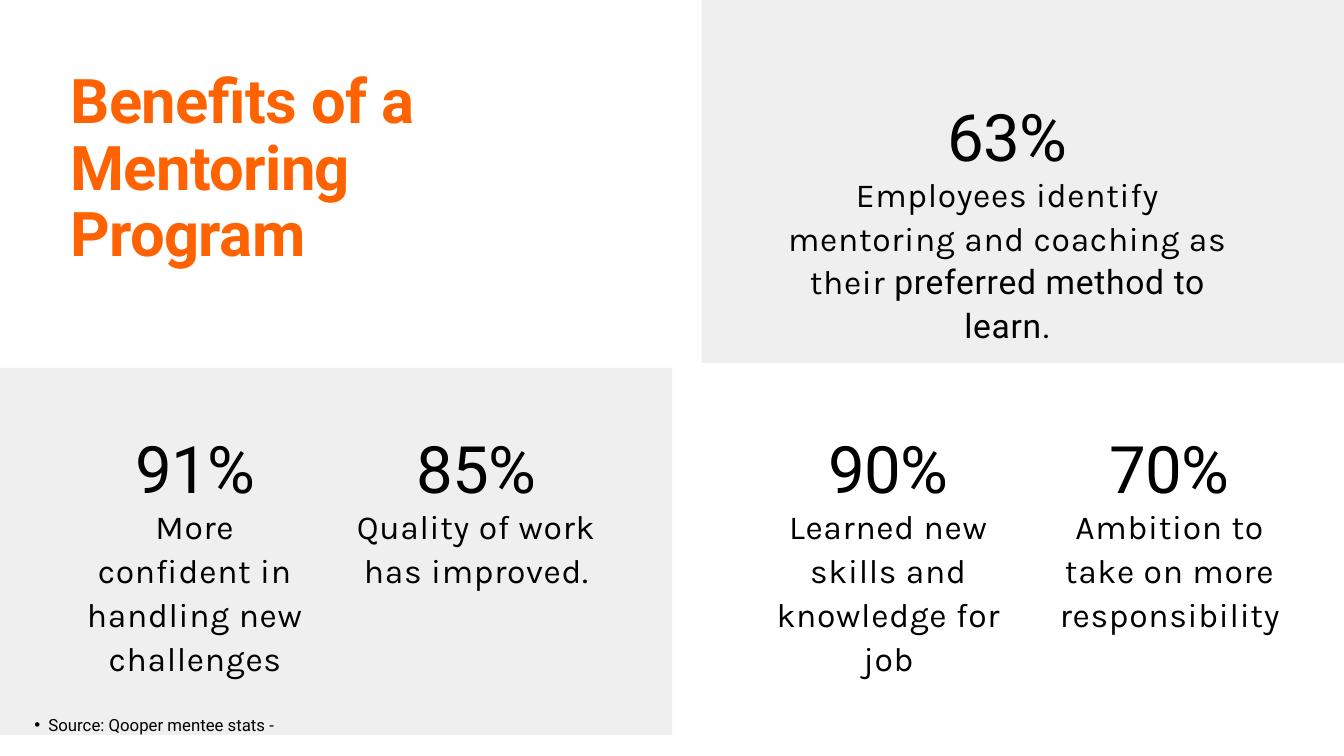
from dataclasses import dataclass

from lxml.etree import SubElement
from pptx import Presentation
from pptx.dml.color import RGBColor
from pptx.enum.shapes import MSO_SHAPE as Shape
from pptx.enum.text import MSO_ANCHOR as Anchor, MSO_AUTO_SIZE as Fit, PP_ALIGN as Align
from pptx.oxml.ns import qn
from pptx.slide import Slide
from pptx.text.text import TextFrame, _Paragraph as Para
from pptx.util import Pt

BLACK = RGBColor(0x00, 0x00, 0x00)
GREY = RGBColor(0xEF, 0xEF, 0xEF)
ORANGE = RGBColor(0xFF, 0x62, 0x00)

LEFT, RIGHT, PITCH = 54, 549.4, 200.9
TOP, LOW = 68.4, 306
SLIM, WIDE = 170.6, 340.6
DROP = 53.3  # from the top of a figure to the top of its caption
ROW = 30.6


@dataclass
class Style:
    font: str
    size: float
    color: RGBColor = BLACK
    bold: bool = False
    track: float = 0


@dataclass
class Stat:
    left: float
    top: float
    width: float
    rows: int
    figure: str
    text: str
    strong: str = ""


TITLE = Style("Roboto", 44, ORANGE, True, -0.5)
FIGURE = Style("Roboto", 46.7, track=-0.5)
CAPTION = Style("Karla", 24, track=0.5)
STRONG = Style("Roboto", 24, track=0.5)
SOURCE = Style("Roboto", 12)

PANELS = [(501.1, -2.9, 480.2, 262.1), (0, 262.8, 480.2, 262.1)]
STATS = [
    Stat(RIGHT, TOP, WIDE, 3, "63%",
         "Employees identify mentoring and coaching as their ",
         "preferred method to learn."),
    Stat(LEFT, LOW, SLIM, 4, "91%", "More confident in handling new challenges"),
    Stat(LEFT + PITCH, LOW, SLIM, 2, "85%", "Quality of work has improved."),
    Stat(RIGHT, LOW, SLIM, 4, "90%", "Learned new skills and knowledge for job"),
    Stat(RIGHT + PITCH, LOW, SLIM, 3, "70%", "Ambition to take on more responsibility"),
]


def place(shape, left: float, top: float, width: float, height: float) -> None:
    box = dict(left=left, top=top, width=width, height=height)
    for name, value in box.items():
        setattr(shape, name, Pt(value))


def setup(frame: TextFrame, inset: bool = False) -> None:
    """Set wrapping, fit and anchor, with zero margins unless inset."""
    form = dict(word_wrap=True, vertical_anchor=Anchor.TOP,
                auto_size=Fit.NONE if inset else Fit.SHAPE_TO_FIT_TEXT)
    if not inset:
        sides = ("left", "top", "right", "bottom")
        form |= {f"margin_{side}": 0 for side in sides}
    for name, value in form.items():
        setattr(frame, name, value)


def write(para: Para, text: str, style: Style) -> None:
    run = para.add_run()
    run.text = text
    form = dict(name=style.font, size=Pt(style.size), bold=style.bold)
    for name, value in form.items():
        setattr(run.font, name, value)
    run.font.color.rgb = style.color
    if style.track:
        run._r.get_or_add_rPr().set("spc", str(int(style.track * 100)))


def add_panel(slide: Slide, box: tuple, layer: int) -> None:
    """Draw a grey block behind the placeholders."""
    panel = slide.shapes.add_shape(Shape.RECTANGLE, *map(Pt, box))
    panel.shadow.inherit = False
    panel.fill.solid()
    panel.fill.fore_color.rgb = GREY
    panel.line.fill.background()
    slide.shapes._spTree.insert(2 + layer, panel._element)


def add_stat(slide: Slide, stat: Stat) -> None:
    group = slide.shapes.add_group_shape()
    figure = [(stat.figure, FIGURE)]
    parts = [(stat.text, CAPTION)]
    if stat.strong:
        parts.append((stat.strong, STRONG))
    for top, height, lead, runs in (
        (stat.top + DROP, stat.rows * ROW, 31.2, parts),
        (stat.top, 54.7, 56, figure),
    ):
        box = group.shapes.add_textbox(*map(Pt, (stat.left, top, stat.width, height)))
        setup(box.text_frame)
        para = box.text_frame.paragraphs[0]
        para.alignment = Align.CENTER
        para.line_spacing = Pt(lead)
        for text, style in runs:
            write(para, text, style)


def add_title(slide: Slide) -> None:
    title = slide.shapes.title
    place(title, 43.2, 46.8, 361.4, 54.7)
    setup(title.text_frame, inset=True)
    para = title.text_frame.paragraphs[0]
    para.alignment = Align.LEFT
    para.line_spacing = 0.9
    write(para, "Benefits of a Mentoring Program", TITLE)


def add_source(slide: Slide) -> None:
    body = slide.placeholders[1]
    place(body, 14.4, 508.3, 340.6, 15.8)
    setup(body.text_frame)
    para = body.text_frame.paragraphs[0]
    form = dict(level=1, alignment=Align.LEFT, line_spacing=Pt(16.8), space_before=Pt(0))
    for name, value in form.items():
        setattr(para, name, value)
    props = para._p.get_or_add_pPr()
    props.set("marL", str(Pt(20.2)))
    props.set("indent", str(Pt(-10.1)))
    SubElement(props, qn("a:buFont")).set("typeface", "Arial")
    SubElement(props, qn("a:buChar")).set("char", "•")
    write(para, "Source: Qooper mentee stats -", SOURCE)


def main() -> None:
    deck = Presentation()
    deck.slide_width, deck.slide_height = Pt(960), Pt(540)
    slide = deck.slides.add_slide(deck.slide_layouts[1])
    for layer, box in enumerate(PANELS):
        add_panel(slide, box, layer)
    for stat in STATS:
        add_stat(slide, stat)
    add_source(slide)
    add_title(slide)
    deck.save("out.pptx")


if __name__ == "__main__":
    main()
